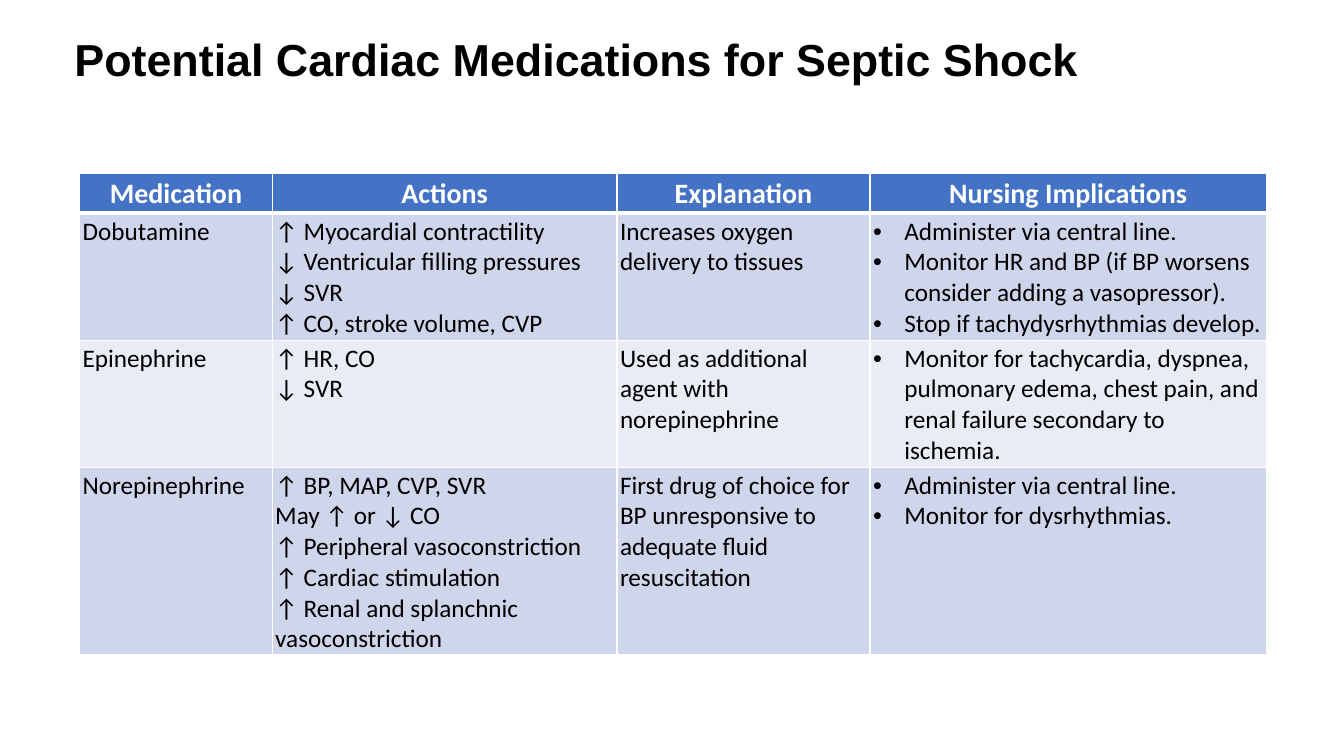
from dataclasses import dataclass

import pptx
import pptx.dml.color
import pptx.enum.text
import pptx.oxml
import pptx.oxml.ns
import pptx.util

Inches = pptx.util.Inches
Pt = pptx.util.Pt

BLACK, WHITE = "000000", "FFFFFF"
HEADER_BLUE = "4472C4"
BAND_FILLS = ("CFD5EA", "E9EBF5")
HEADINGS = ("Medication", "Actions", "Explanation", "Nursing Implications")
COLUMN_WIDTHS = (1.91, 3.42, 2.51, 3.93)
ROW_HEIGHTS = (0.33, 1.16, 1.16, 1.72)
CELL_INSET = 0.03
BULLET_INDENT = 0.31


@dataclass(frozen=True)
class Medication:
    name: str
    actions: tuple[str, ...]
    explanation: str
    implications: tuple[str, ...]


@dataclass(frozen=True)
class TextStyle:
    font: str
    size: int
    color: str
    bold: bool = False
    centered: bool = False
    bulleted: bool = False


TITLE = TextStyle("Arial", 32, BLACK, bold=True)
HEADING = TextStyle("Calibri", 20, WHITE, bold=True, centered=True)
BODY = TextStyle("Calibri", 18, BLACK)
BULLETS = TextStyle("Calibri", 18, BLACK, bulleted=True)

MEDICATIONS = (
    Medication(
        "Dobutamine",
        ("↑ Myocardial contractility", "↓ Ventricular filling pressures",
         "↓ SVR", "↑ CO, stroke volume, CVP"),
        "Increases oxygen delivery to tissues",
        ("Administer via central line.",
         "Monitor HR and BP (if BP worsens consider adding a vasopressor).",
         "Stop if tachydysrhythmias develop."),
    ),
    Medication(
        "Epinephrine",
        ("↑ HR, CO", "↓ SVR"),
        "Used as additional agent with norepinephrine",
        ("Monitor for tachycardia, dyspnea, pulmonary edema, chest pain, "
         "and renal failure secondary to ischemia.",),
    ),
    Medication(
        "Norepinephrine",
        ("↑ BP, MAP, CVP, SVR", "May ↑ or ↓ CO", "↑ Peripheral vasoconstriction",
         "↑ Cardiac stimulation", "↑ Renal and splanchnic vasoconstriction"),
        "First drug of choice for BP unresponsive to adequate fluid resuscitation",
        ("Administer via central line.", "Monitor for dysrhythmias."),
    ),
)


def rgb(color: str) -> pptx.dml.color.RGBColor:
    return pptx.dml.color.RGBColor.from_string(color)


def add_bullet(paragraph) -> None:
    properties = paragraph._p.get_or_add_pPr()
    properties.set("marL", str(Inches(BULLET_INDENT)))
    properties.set("indent", str(-Inches(BULLET_INDENT)))
    namespace = pptx.oxml.ns.nsdecls("a")
    properties.append(pptx.oxml.parse_xml(f'<a:buFont {namespace} typeface="Arial"/>'))
    properties.append(pptx.oxml.parse_xml(f'<a:buChar {namespace} char="•"/>'))


def write_lines(frame, lines: tuple[str, ...], style: TextStyle) -> None:
    """Write each line as a paragraph of its own."""
    for index, line in enumerate(lines):
        paragraph = frame.add_paragraph() if index else frame.paragraphs[0]
        if style.bulleted:
            add_bullet(paragraph)
        if style.centered:
            paragraph.alignment = pptx.enum.text.PP_ALIGN.CENTER
        run = paragraph.add_run()
        run.text = line
        run.font.name = style.font
        run.font.size = Pt(style.size)
        run.font.bold = style.bold
        run.font.color.rgb = rgb(style.color)


def set_borders(cell, bottom_points: int) -> None:
    """Draw white cell borders, 1 pt wide except for the bottom one."""
    properties = cell._tc.get_or_add_tcPr()
    widths = {"lnL": 1, "lnR": 1, "lnT": 1, "lnB": bottom_points}
    for position, (side, points) in enumerate(widths.items()):
        properties.insert(position, pptx.oxml.parse_xml(
            f'<a:{side} {pptx.oxml.ns.nsdecls("a")} w="{Pt(points)}">'
            f'<a:solidFill><a:srgbClr val="{WHITE}"/></a:solidFill></a:{side}>'))


def fill_cell(cell, lines: tuple[str, ...], style: TextStyle, fill: str,
              bottom_points: int = 1) -> None:
    cell.margin_left = cell.margin_right = Inches(CELL_INSET)
    cell.margin_top = cell.margin_bottom = Inches(CELL_INSET)
    cell.fill.solid()
    cell.fill.fore_color.rgb = rgb(fill)
    set_borders(cell, bottom_points)
    write_lines(cell.text_frame, lines, style)


def add_title(slide, text: str) -> None:
    box = slide.shapes.add_textbox(Inches(0.64), Inches(0.21), Inches(10.64), Inches(0.74))
    box.text_frame.word_wrap = True
    box.text_frame.vertical_anchor = pptx.enum.text.MSO_ANCHOR.MIDDLE
    write_lines(box.text_frame, (text,), TITLE)


def add_medication_table(slide) -> None:
    frame = slide.shapes.add_table(
        len(ROW_HEIGHTS), len(COLUMN_WIDTHS),
        Inches(0.79), Inches(1.72), Inches(11.75), Inches(4.74))
    table = frame.table
    for column, width in zip(table.columns, COLUMN_WIDTHS):
        column.width = Inches(width)
    for row, height in zip(table.rows, ROW_HEIGHTS):
        row.height = Inches(height)

    for column, heading in enumerate(HEADINGS):
        fill_cell(table.cell(0, column), (heading,), HEADING, HEADER_BLUE, bottom_points=3)
    for index, medication in enumerate(MEDICATIONS):
        contents = (
            ((medication.name,), BODY),
            (medication.actions, BODY),
            ((medication.explanation,), BODY),
            (medication.implications, BULLETS),
        )
        band = BAND_FILLS[index % len(BAND_FILLS)]
        for column, (lines, style) in enumerate(contents):
            fill_cell(table.cell(index + 1, column), lines, style, band)


def main() -> None:
    presentation = pptx.Presentation()
    presentation.slide_width = Inches(13.33)
    presentation.slide_height = Inches(7.5)
    slide = presentation.slides.add_slide(presentation.slide_layouts[6])
    add_title(slide, "Potential Cardiac Medications for Septic Shock")
    add_medication_table(slide)
    presentation.save("out.pptx")


if __name__ == "__main__":
    main()
